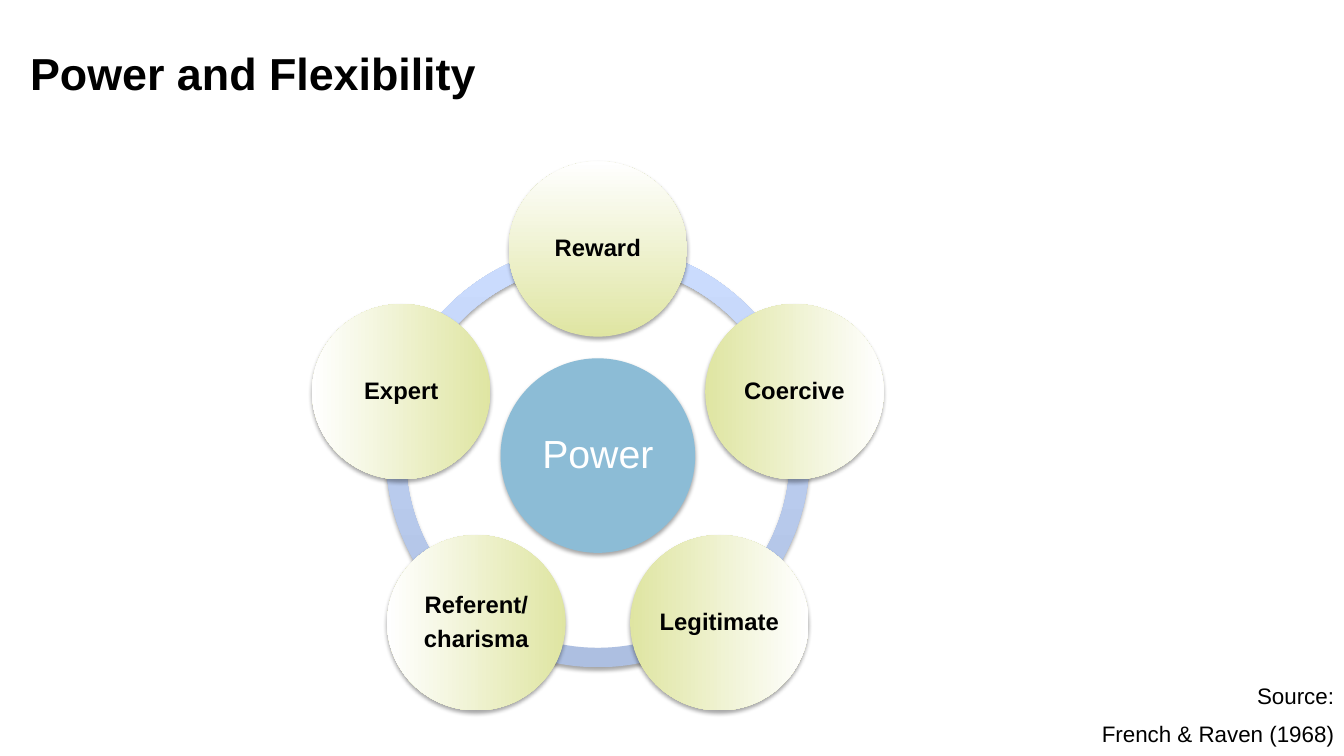
from dataclasses import dataclass
from math import cos, radians, sin

from lxml.etree import SubElement
from pptx import Presentation
from pptx.dml.color import RGBColor
from pptx.enum.shapes import MSO_SHAPE as SHAPE
from pptx.enum.text import MSO_ANCHOR as ANCHOR, PP_ALIGN as ALIGN
from pptx.oxml.ns import qn
from pptx.util import Inches, Pt

CENTER_X, CENTER_Y = 5.93, 4.52
ORBIT = 2.05
RING_SIZE, HUB_SIZE = 4.2, 1.93
BASE_W, BASE_H = 1.77, 1.74
STEP = 72
RING_COLORS = ("ADBFE1", "CCDDFF")
BASE_COLORS = ("DFE5A2", "FFFFFF")
BASE_FORMAT = {"size": Pt(17), "bold": True}


@dataclass
class PowerBase:
    lines: list[str]
    gradient_angle: int


# Clockwise from the top of the ring
POWER_BASES = [
    PowerBase(["Reward"], 90),
    PowerBase(["Coercive"], 0),
    PowerBase(["Legitimate"], 0),
    PowerBase(["Referent/", "charisma"], 180),
    PowerBase(["Expert"], 180),
]


def rgb(color: str) -> RGBColor:
    return RGBColor.from_string(color)


def write(tf, lines: list[str], font: dict, color: str = "000000",
          align=ALIGN.LEFT, before: float = 0, after: float = 0) -> None:
    tf.word_wrap = True
    for i, line in enumerate(lines):
        p = tf.paragraphs[0] if i == 0 else tf.add_paragraph()
        p.alignment = align
        p.line_spacing = 0.9
        p.space_before = Pt(before if i else 0)
        p.space_after = Pt(after)
        r = p.add_run()
        r.text = line
        for name, value in {"name": "Arial", **font}.items():
            setattr(r.font, name, value)
        r.font.color.rgb = rgb(color)


def add_text(s, left: float, top: float, width: float, height: float,
             lines: list[str], font: dict, **layout) -> None:
    box = s.shapes.add_textbox(*map(Inches, (left, top, width, height)))
    write(box.text_frame, lines, font, **layout)


def add_shadow(sp) -> None:
    sp.shadow.inherit = False
    effects = sp.element.spPr.find(qn("a:effectLst"))
    shadow = SubElement(effects, qn("a:outerShdw"), blurRad=str(Pt(3.1)),
                        dist=str(Pt(1.8)), dir="5400000", rotWithShape="0")
    black = SubElement(shadow, qn("a:srgbClr"), val="000000")
    SubElement(black, qn("a:alpha"), val="35000")


def add_centered(s, kind, x: float, y: float, width: float, height: float):
    """Add a shadowed, unlined shape around the point x, y."""
    sp = s.shapes.add_shape(kind, Inches(x - width / 2), Inches(y - height / 2),
                            Inches(width), Inches(height))
    sp.line.fill.background()
    add_shadow(sp)
    return sp


def fill_gradient(sp, colors: tuple[str, str], angle: int) -> None:
    sp.fill.gradient()
    sp.fill.gradient_angle = angle
    for stop, color in zip(sp.fill.gradient_stops, colors):
        stop.color.rgb = rgb(color)


def add_label(sp, lines: list[str], font: dict, color: str, inset: float) -> None:
    tf = sp.text_frame
    tf.vertical_anchor = ANCHOR.MIDDLE
    for side in ("left", "top", "right", "bottom"):
        setattr(tf, f"margin_{side}", Inches(inset))
    write(tf, lines, font, color, ALIGN.CENTER, after=0.35 * font["size"].pt)


def add_arc(s, start: int) -> None:
    sp = add_centered(s, SHAPE.BLOCK_ARC, CENTER_X, CENTER_Y, RING_SIZE, RING_SIZE)
    # Angles are stored in 60000ths of a degree, adjustments in 100000ths
    sp.adjustments[0] = start % 360 * 0.6
    sp.adjustments[1] = (start + STEP) % 360 * 0.6
    sp.adjustments[2] = 0.046
    fill_gradient(sp, RING_COLORS, 90)


def add_hub(s) -> None:
    sp = add_centered(s, SHAPE.OVAL, CENTER_X, CENTER_Y, HUB_SIZE, HUB_SIZE)
    sp.fill.solid()
    sp.fill.fore_color.rgb = rgb("8CBCD6")
    add_label(sp, ["Power"], {"size": Pt(28)}, "FFFFFF", 0.04)


def add_base(s, base: PowerBase, angle: int) -> None:
    x = CENTER_X + ORBIT * cos(radians(angle))
    y = CENTER_Y + ORBIT * sin(radians(angle))
    sp = add_centered(s, SHAPE.OVAL, x, y, BASE_W, BASE_H)
    fill_gradient(sp, BASE_COLORS, base.gradient_angle)
    add_label(sp, base.lines, BASE_FORMAT, "000000", 0.02)


def main() -> None:
    prs = Presentation()
    prs.slide_width, prs.slide_height = Inches(13.33), Inches(7.5)
    s = prs.slides.add_slide(prs.slide_layouts[6])

    add_text(s, 5.66, 6.75, 7.67, 0.7, ["Source:", "French & Raven (1968)"],
             {"size": Pt(16)}, align=ALIGN.RIGHT, before=10)
    add_text(s, 0.2, 0.46, 8.95, 1.06, ["Power and Flexibility"],
             {"size": Pt(32), "bold": True})

    angles = [270 + STEP * i for i in range(len(POWER_BASES))]
    for angle in reversed(angles):
        add_arc(s, angle)
    add_hub(s)
    for base, angle in zip(POWER_BASES, angles):
        add_base(s, base, angle)

    prs.save("out.pptx")


if __name__ == "__main__":
    main()
